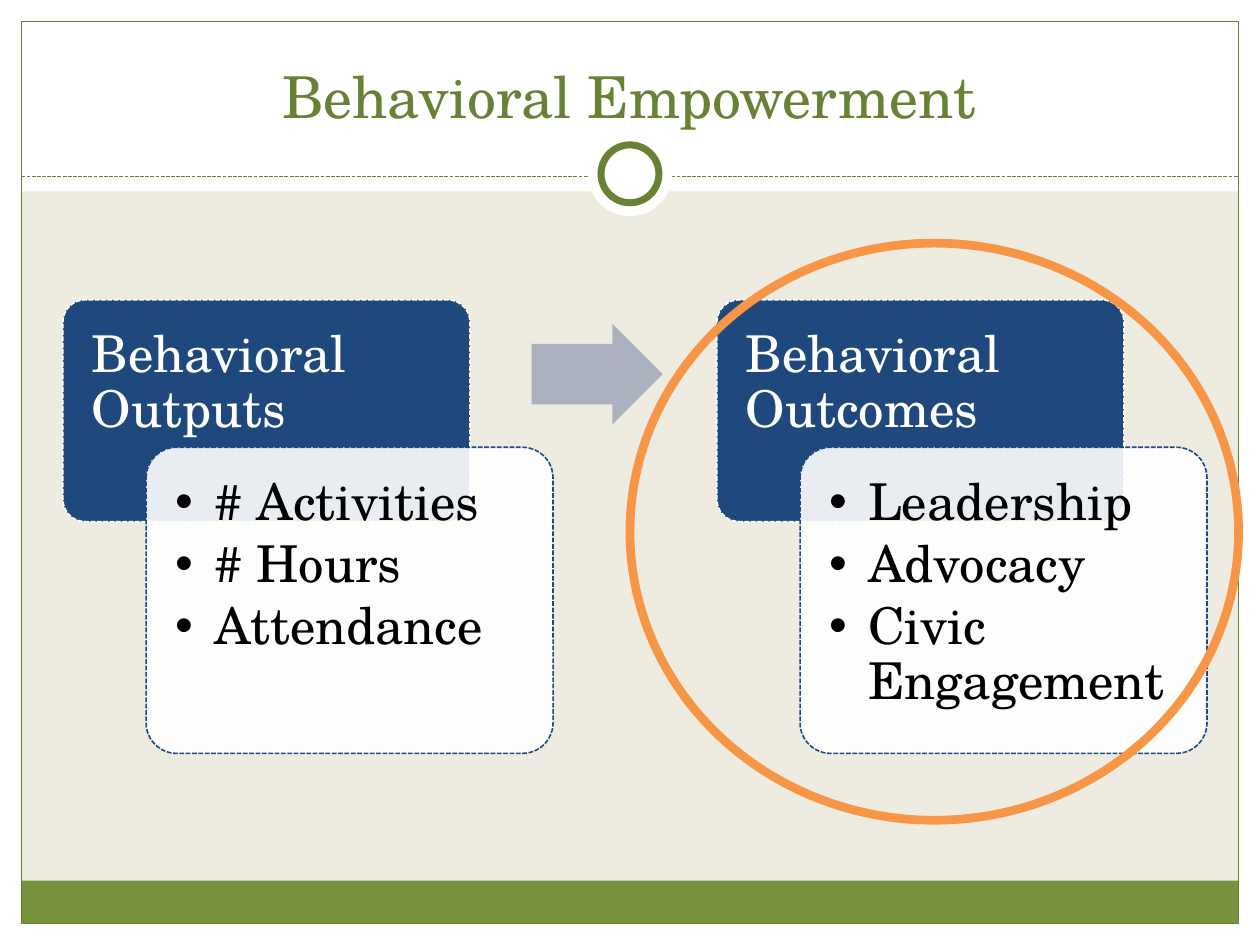
from pptx import Presentation
from pptx import util as u
from pptx.dml.color import RGBColor
from pptx.enum import dml, shapes, text
from pptx.oxml.ns import qn
from lxml import etree

TITLE = "Behavioral Empowerment"
PANELS = [
    ("Behavioral Outputs", ["# Activities", "# Hours", "Attendance"]),
    ("Behavioral Outcomes", ["Leadership", "Advocacy", "Civic Engagement"]),
]
FONT = "TeX Gyre Schola"
WHITE, GREEN, DARK, NAVY = "FFFFFF", "76923C", "688135", "1F497D"
WIDE, HIGH, EDGE = 10, 7.5, 0.17
LEFT, TOP, STEP = 0.5, 2.38, 5.19
CARD, HEAD, BODY = 3.23, 1.76, 2.43
SHIFT, DROP, PAD = 0.66, 1.17, 0.23
KIND = shapes.MSO_SHAPE


def color(target, code):
    target.rgb = RGBColor.from_string(code)


def stroke(line, code, width, dash=False):
    color(line.color, code)
    line.width = u.Pt(width)
    if dash:
        line.dash_style = dml.MSO_LINE.SQUARE_DOT


def draw(kind, box, fill=None, line=None, adj=(), alpha=None):
    shape = slide.shapes.add_shape(kind, *map(u.Inches, box))
    shape.shadow.inherit = False
    for n, value in enumerate(adj):
        shape.adjustments[n] = value
    if fill:
        shape.fill.solid()
        color(shape.fill.fore_color, fill)
    else:
        shape.fill.background()
    if line:
        stroke(shape.line, *line)
    else:
        shape.line.fill.background()
    if alpha:
        code = shape.fill._xPr.find(".//" + qn("a:srgbClr"))
        etree.SubElement(code, qn("a:alpha")).set("val", str(alpha * 1000))


def write(shape, box, lines, size, ink, pads, after=0, anchor="TOP", align="LEFT", spacing=0.9):
    for name, value in zip(("left", "top", "width", "height"), box):
        setattr(shape, name, u.Inches(value))
    frame = shape.text_frame
    frame.text = "\n".join(lines)
    look = {"word_wrap": True, "auto_size": text.MSO_AUTO_SIZE.NONE,
            "vertical_anchor": text.MSO_ANCHOR[anchor]}
    for side, pad in zip(("left", "top", "right", "bottom"), pads):
        look["margin_" + side] = u.Inches(pad)
    for name, value in look.items():
        setattr(frame, name, value)
    form = {"alignment": text.PP_ALIGN[align], "line_spacing": spacing,
            "space_before": u.Pt(0), "space_after": u.Pt(after)}
    for para in frame.paragraphs:
        for name, value in form.items():
            setattr(para, name, value)
        for name, value in {"name": FONT, "size": u.Pt(size)}.items():
            setattr(para.font, name, value)
            setattr(para.runs[0].font, name, value)
        color(para.runs[0].font.color, ink)


def bullet(shape):
    for para in shape.text_frame.paragraphs:
        props = para._p.get_or_add_pPr()
        props.set("marL", str(u.Inches(0.31)))
        props.set("indent", str(-u.Inches(0.31)))
        etree.SubElement(props, qn("a:buChar")).set("char", "•")
        mark = props.find(qn("a:defRPr"))
        if mark is not None:
            props.append(mark)


deck = Presentation()
deck.slide_width, deck.slide_height = u.Inches(WIDE), u.Inches(HIGH)
slide = deck.slides.add_slide(deck.slide_layouts[3])
tree = slide.shapes._spTree
title, *lists = slide.placeholders
slide.background.fill.solid()
color(slide.background.fill.fore_color, "EEECE1")

span = WIDE - 2 * EDGE
for box in [(0, HIGH - EDGE, WIDE, EDGE), (0, 0, WIDE, 1.52),
            (0, 0, EDGE, HIGH), (WIDE - EDGE, 0, EDGE, HIGH)]:
    draw(KIND.RECTANGLE, box, WHITE)
draw(KIND.RECTANGLE, (EDGE, 6.99, span, 0.34), GREEN)
draw(KIND.RECTANGLE, (EDGE, EDGE, span, HIGH - 2 * EDGE), line=(DARK, 0.75))
rule = slide.shapes.add_connector(
    shapes.MSO_CONNECTOR.STRAIGHT, *map(u.Inches, (EDGE, 1.4, WIDE - EDGE, 1.4)))
stroke(rule.line, DARK, 0.75, True)
etree.SubElement(rule._element.spPr, qn("a:effectLst"))
for size, line in [(0.67, None), (0.46, (DARK, 4))]:
    draw(KIND.OVAL, ((WIDE - size) / 2, 1.38 - size / 2, size, size), WHITE, line)

tree.append(title._element)
write(title, (0.33, 0.25, 9.33, 0.83), [TITLE], 33, DARK, (0.1, 0.05, 0.1, 0.05),
      anchor="BOTTOM", align="CENTER", spacing=1)

for n, ((label, items), body) in enumerate(zip(PANELS, lists)):
    x = LEFT + n * STEP
    draw(KIND.ROUNDED_RECTANGLE, (x, TOP, CARD, HEAD), NAVY, (WHITE, 0.9, True), [0.1])
    box = (x, TOP, CARD, DROP)
    name = slide.shapes.add_textbox(*map(u.Inches, box))
    write(name, box, [label], 29, WHITE, (PAD, PAD, PAD, 0.12), 10)
    box = (x + SHIFT, TOP + DROP, CARD, BODY)
    draw(KIND.ROUNDED_RECTANGLE, box, WHITE, (NAVY, 0.9, True), [0.1], 90)
    tree.append(body._element)
    write(body, box, items, 29, "000000", [PAD] * 4, 4.35)
    bullet(body)

draw(KIND.RIGHT_ARROW, (4.22, 2.57, 1.04, 0.8), "ACB1BF", adj=[0.6, 0.5])
draw(KIND.OVAL, (5, 1.93, 4.83, 4.58), line=("F79646", 5))

deck.save("out.pptx")
